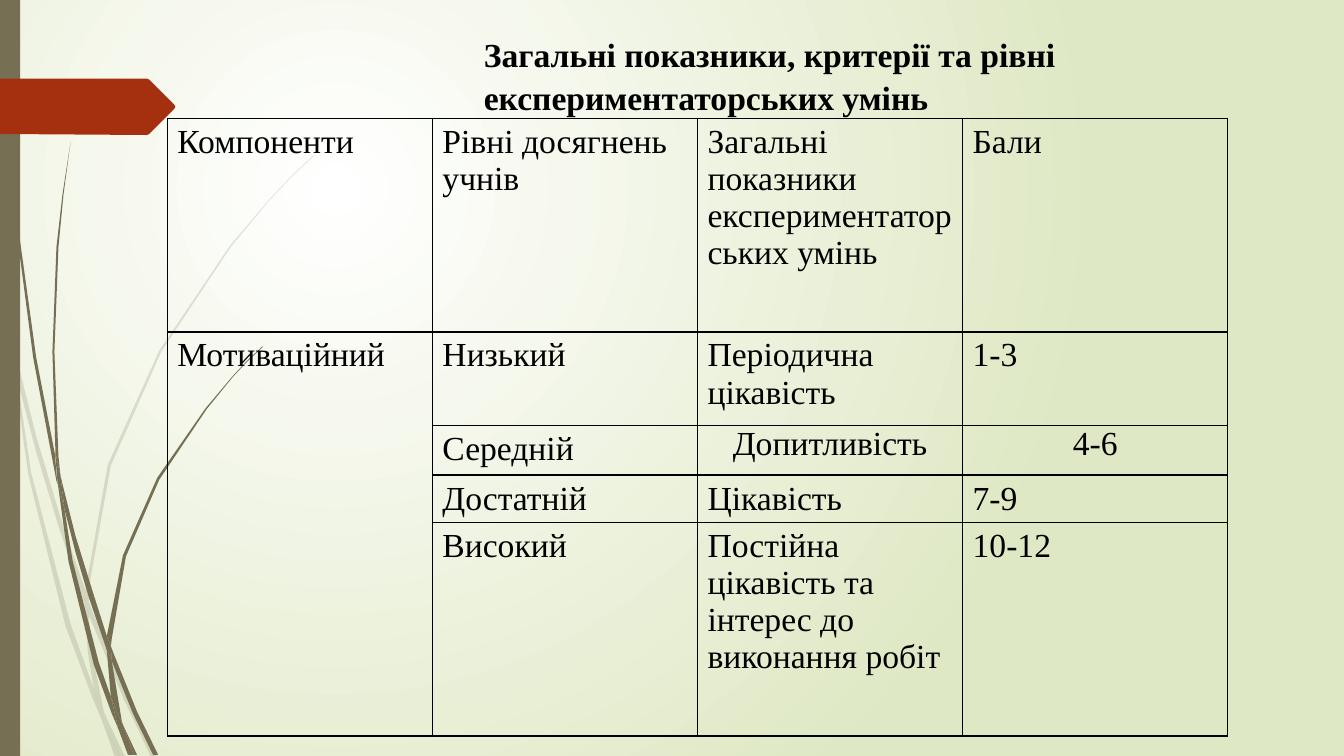
import pptx
import pptx.dml.color
import pptx.enum.text
import pptx.enum.shapes
import pptx.oxml
import pptx.oxml.ns
import pptx.util

Pt = pptx.util.Pt
RGBColor = pptx.dml.color.RGBColor
Align = pptx.enum.text.PP_ALIGN
qn = pptx.oxml.ns.qn

BLACK = RGBColor(0x00, 0x00, 0x00)
WHITE = RGBColor(0xFF, 0xFF, 0xFF)
PALE_GREEN = RGBColor(0xDF, 0xE8, 0xC4)
OLIVE = RGBColor(0x76, 0x6F, 0x54)
RUST = RGBColor(0xA5, 0x30, 0x10)
OUTLINE_UNIT = Pt(0.72)

PALE_GRASS = [
    [(11, 350), (9, 322), (0, 282), (0, 299), (10, 344)],
    [(58, 522), (84, 599), (85, 586), (62, 520), (36, 433), (14, 345), (17, 376), (36, 449)],
    [(92, 607), (88, 596), (88, 610), (123, 694), (150, 751), (155, 751), (127, 692)],
    [(119, 751), (124, 751), (105, 711)],
    [(93, 683), (70, 619), (31, 469), (17, 376), (11, 350), (28, 470), (65, 621), (92, 693),
     (101, 714), (99, 707)],
    [(84, 599), (87, 646), (93, 683), (96, 692), (105, 711), (103, 706), (91, 646), (88, 610),
     (88, 608)],
    [(88, 584), (110, 462), (160, 349), (229, 245), (268, 198), (290, 175), (312, 154),
     (312, 153), (289, 175), (268, 197), (228, 244), (158, 348), (107, 461), (85, 584),
     (85, 586), (88, 596)],
    [(101, 714), (114, 751), (119, 751)],
    [(88, 608), (88, 610), (88, 596), (85, 586), (84, 599)],
    [(96, 692), (93, 683), (99, 707), (101, 714), (119, 751), (105, 711)],
]
DARK_GRASS = [
    [(7, 110), (17, 233), (33, 355), (56, 477), (57, 481), (55, 457), (55, 453), (36, 355),
     (19, 232), (8, 109), (5, 48), (4, 0), (3, 0), (4, 48)],
    [(88, 592), (106, 645), (106, 631), (93, 590), (75, 532), (60, 472), (64, 505), (75, 548)],
    [(113, 649), (110, 641), (111, 656), (132, 708), (152, 749), (157, 749), (136, 706)],
    [(110, 691), (98, 657), (72, 556), (64, 505), (57, 477), (68, 557), (93, 659), (111, 708),
     (117, 722), (116, 717)],
    [(60, 472), (58, 453), (54, 349), (58, 245), (63, 193), (70, 141), (62, 193), (56, 245),
     (52, 349), (55, 449)],
    [(133, 749), (136, 749), (122, 719)],
    [(57, 477), (64, 505), (60, 472), (55, 449), (55, 453)],
    [(111, 633), (125, 552), (158, 476), (205, 406), (231, 374), (245, 359), (261, 344),
     (260, 344), (245, 358), (231, 373), (204, 405), (156, 474), (122, 551), (106, 631),
     (110, 641)],
    [(117, 722), (127, 749), (131, 749)],
    [(106, 645), (110, 691), (116, 706), (122, 719), (121, 716), (111, 656), (109, 651)],
    [(106, 645), (109, 651), (111, 656), (110, 641), (106, 631)],
    [(116, 706), (110, 691), (116, 717), (117, 722), (130, 749), (133, 749), (122, 719)],
]
RED_TAB = [(0, 78), (146, 78), (148, 79), (173, 104), (174, 106), (173, 108), (148, 133),
           (146, 134), (0, 133)]

SKILL_LEVELS = [
    ["Компоненти", "Рівні досягнень учнів", "Загальні показники експериментаторських умінь", "Бали"],
    ["Мотиваційний", "Низький", "Періодична цікавість", "1-3"],
    ["", "Середній", "Допитливість", "4-6"],
    ["", "Достатній", "Цікавість", "7-9"],
    ["", "Високий", "Постійна цікавість та інтерес до виконання робіт", "10-12"],
]
ROW_HEIGHTS = [152.64, 66.96, 35.28, 31.68, 152.64]
CENTRED_CELLS = {(2, 2), (2, 3)}


class SlideBuilder:
    font_name = "Times New Roman"
    font_size = Pt(24)

    def __init__(self, page):
        self.page = page

    def background(self, inner, outer):
        fill = self.page.background.fill
        fill.gradient()
        for stop, color in zip(fill.gradient_stops, (inner, outer)):
            stop.color.rgb = color
        gradient = self.page.element.find(".//" + qn("a:gradFill"))
        gradient.remove(gradient.find(qn("a:lin")))
        gradient.find(qn("a:gsLst")).addnext(pptx.oxml.parse_xml(
            f'<a:path {pptx.oxml.ns.nsdecls("a")} path="circle">'
            '<a:fillToRect l="50000" t="50000" r="100000" b="100000"/></a:path>'))

    def paint(self, shape, color, alpha=100):
        shape.shadow.inherit = False
        shape.line.fill.background()
        shape.fill.solid()
        shape.fill.fore_color.rgb = color
        if alpha < 100:
            tint = shape.element.spPr.find(".//" + qn("a:srgbClr"))
            tint.append(pptx.oxml.parse_xml(
                f'<a:alpha {pptx.oxml.ns.nsdecls("a")} val="{alpha * 1000}"/>'))

    def outline(self, shapes, points, color, alpha=100):
        builder = shapes.build_freeform(*points[0], scale=OUTLINE_UNIT)
        builder.add_line_segments(points[1:], close=True)
        self.paint(builder.convert_to_shape(), color, alpha)

    def grass(self, blades, color, alpha=100):
        group = self.page.shapes.add_group_shape()
        for blade in blades:
            self.outline(group.shapes, blade, color, alpha)

    def bar(self, left, top, width, height, color):
        box = self.page.shapes.add_shape(
            pptx.enum.shapes.MSO_SHAPE.RECTANGLE, Pt(left), Pt(top), Pt(width), Pt(height))
        self.paint(box, color)

    def style(self, para, bold=False, align=Align.LEFT):
        para.alignment = align
        for span in para.runs:
            span.font.name = self.font_name
            span.font.size = self.font_size
            span.font.bold = bold
            span.font.color.rgb = BLACK

    def title(self, text, left, top, width, height):
        box = self.page.shapes.title
        box.left, box.top, box.width, box.height = Pt(left), Pt(top), Pt(width), Pt(height)
        frame = box.text_frame
        frame.text = text
        frame.word_wrap = True
        frame.auto_size = pptx.enum.text.MSO_AUTO_SIZE.NONE
        frame.vertical_anchor = pptx.enum.text.MSO_ANCHOR.TOP
        para = frame.paragraphs[0]
        para.line_spacing = 1.07
        para.space_before = Pt(0)
        self.style(para, bold=True)

    def border(self, cell):
        properties = cell._tc.get_or_add_tcPr()
        for side in ("lnL", "lnR", "lnT", "lnB"):
            properties.append(pptx.oxml.parse_xml(
                f'<a:{side} {pptx.oxml.ns.nsdecls("a")} w="{Pt(1)}">'
                f'<a:solidFill><a:srgbClr val="{BLACK}"/></a:solidFill></a:{side}>'))

    def table(self, rows, heights, left, top, width):
        table = self.page.shapes.add_table(
            len(rows), len(rows[0]), Pt(left), Pt(top), Pt(width), Pt(sum(heights))).table
        table.first_row = False
        table.horz_banding = False
        for column in table.columns:
            column.width = Pt(width / len(rows[0]))
        for row_index, (texts, height) in enumerate(zip(rows, heights)):
            table.rows[row_index].height = Pt(height)
            for column_index, text in enumerate(texts):
                cell = table.cell(row_index, column_index)
                self.border(cell)
                cell.fill.background()
                cell.text_frame.text = text
                centred = (row_index, column_index) in CENTRED_CELLS
                if centred:
                    cell.margin_left = cell.margin_right = Pt(5)
                    cell.margin_top = cell.margin_bottom = Pt(0)
                self.style(cell.text_frame.paragraphs[0],
                           align=Align.CENTER if centred else Align.LEFT)
        table.cell(1, 0).merge(table.cell(len(rows) - 1, 0))


def main():
    deck = pptx.Presentation()
    deck.slide_width, deck.slide_height = Pt(960), Pt(540)
    page = deck.slides.add_slide(deck.slide_layouts[5])
    slide = SlideBuilder(page)
    slide.background(WHITE, PALE_GREEN)
    slide.grass(PALE_GRASS, OLIVE, alpha=20)
    slide.grass(DARK_GRASS, OLIVE)
    slide.bar(0, 0, 14.4, 540, OLIVE)
    slide.outline(page.shapes, RED_TAB, RUST)
    slide.table(SKILL_LEVELS, ROW_HEIGHTS, 119.5, 84.5, 757.44)
    slide.title("Загальні показники, критерії та рівні експериментаторських умінь",
                338.4, 18.72, 480.24, 65.52)
    deck.save("out.pptx")


if __name__ == "__main__":
    main()
